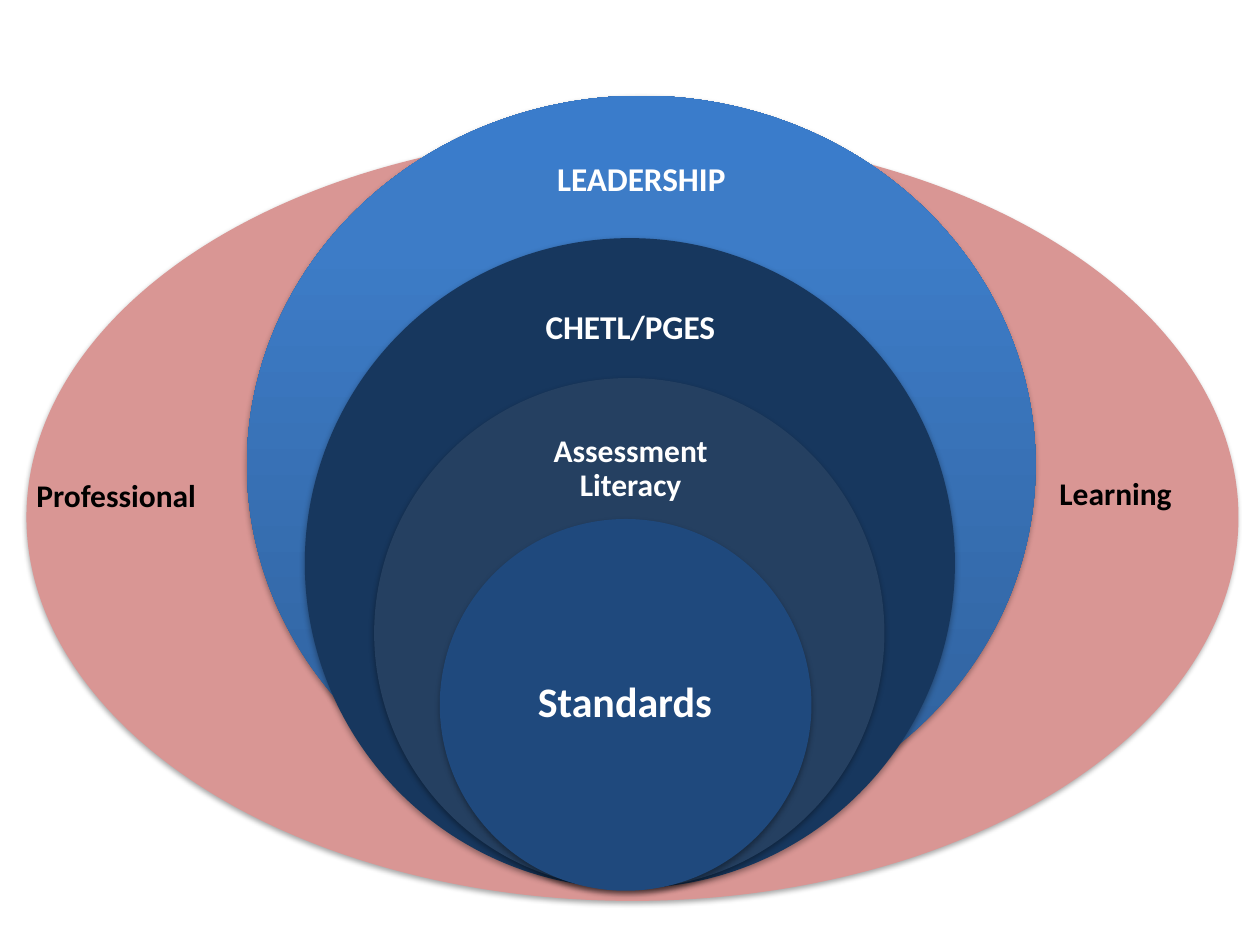
from lxml import etree
from pptx import Presentation
from pptx.dml.color import RGBColor
from pptx.enum.shapes import MSO_SHAPE
from pptx.enum.text import MSO_ANCHOR, PP_ALIGN
from pptx.oxml import parse_xml
from pptx.oxml.ns import nsdecls, qn
from pptx.util import Pt

OVAL = MSO_SHAPE.OVAL
TOP, MIDDLE = MSO_ANCHOR.TOP, MSO_ANCHOR.MIDDLE
LEFT, CENTER = PP_ALIGN.LEFT, PP_ALIGN.CENTER

THEME = {
    "font": "Calibri",
    "white": "FFFFFF", "black": "000000",
    "learning": "D99694", "leadership": "3D7CC7",
    "chetl": "17375E", "literacy": "254061", "standards": "1F497D",
    "gradient": [(0, "2F5F99"), (80, "3D7CC7"), (100, "3A7CCB")],
    "side": 18, "small": 18, "ring": 19, "core": 24,
}

prs = Presentation()
prs.slide_width, prs.slide_height = Pt(720), Pt(540)
slide = prs.slides.add_slide(prs.slide_layouts[6])


def add_oval(left, top, width, height, color):
    """Add a borderless ellipse with a soft shadow below it."""
    oval = slide.shapes.add_shape(OVAL, Pt(left), Pt(top), Pt(width), Pt(height))
    oval.fill.solid()
    oval.fill.fore_color.rgb = RGBColor.from_string(THEME[color])
    oval.line.fill.background()
    oval.shadow.inherit = False
    effects = oval._element.spPr.find(qn("a:effectLst"))
    shadow = etree.SubElement(effects, qn("a:outerShdw"), blurRad=str(Pt(3.1)),
                              dist=str(Pt(1.8)), dir="5400000", rotWithShape="0")
    shade = etree.SubElement(shadow, qn("a:srgbClr"), val=THEME["black"])
    etree.SubElement(shade, qn("a:alpha"), val="35000")
    return oval


def add_text(text, left, top, width, height, *, size, color="white",
             align=CENTER, anchor=MIDDLE, inset=(10.8, 10.8), spacing=0.9):
    box = slide.shapes.add_textbox(Pt(left), Pt(top), Pt(width), Pt(height))
    frame = box.text_frame
    frame.word_wrap = True
    frame.vertical_anchor = anchor
    frame.margin_left = frame.margin_right = Pt(inset[0])
    frame.margin_top = frame.margin_bottom = Pt(inset[1])
    paragraph = frame.paragraphs[0]
    paragraph.alignment = align
    paragraph.line_spacing = spacing
    run = paragraph.add_run()
    run.text = text
    run.font.name = THEME["font"]
    run.font.size = Pt(THEME[size])
    run.font.bold = True
    run.font.color.rgb = RGBColor.from_string(THEME[color])


# Professional learning: the wide ellipse behind everything
add_oval(15.1, 76.3, 692.6, 438.5, "learning")

# Leadership: the largest ring, shaded from bottom to top
leadership = add_oval(141.1, 54.7, 450.7, 421.9, "leadership")
stops = "".join(f'<a:gs pos="{pos * 1000}"><a:srgbClr val="{color}"/></a:gs>'
                for pos, color in THEME["gradient"])
solid_fill = leadership._element.spPr.find(qn("a:solidFill"))
solid_fill.getparent().replace(solid_fill, parse_xml(
    f'<a:gradFill {nsdecls("a")} rotWithShape="1"><a:gsLst>{stops}</a:gsLst>'
    '<a:lin ang="16200000" scaled="0"/></a:gradFill>'))
add_text("LEADERSHIP", 269.3, 79.2, 194.4, 48.2, size="ring")

# Nested circles: color, left, top, diameter, label, label box, size, inset
circles = [
    ("chetl", 174.2, 136.1, 371.5, "CHETL/PGES",
     (264.2, 162, 192.2, 51.1), "ring", 10.8),
    ("literacy", 213.8, 216, 291.6, "Assessment Literacy",
     (281.5, 241.9, 157.7, 52.6), "small", 10.1),
    ("standards", 251.3, 296.6, 212.4, "Standards",
     (282.2, 349.2, 149.8, 105.8), "core", 13.7),
]
for color, left, top, diameter, label, label_box, size, inset in circles:
    add_oval(left, top, diameter, diameter, color)
    add_text(label, *label_box, size=size, inset=(inset, inset))

# Side labels on the wide ellipse
for label, left, top, width in [("Professional", 13.7, 268.6, 119.5),
                                ("Learning", 598.3, 267.1, 111.6)]:
    add_text(label, left, top, width, 29.1, size="side", color="black",
             align=LEFT, anchor=TOP, inset=(7.2, 3.6), spacing=1.0)

prs.save("out.pptx")
